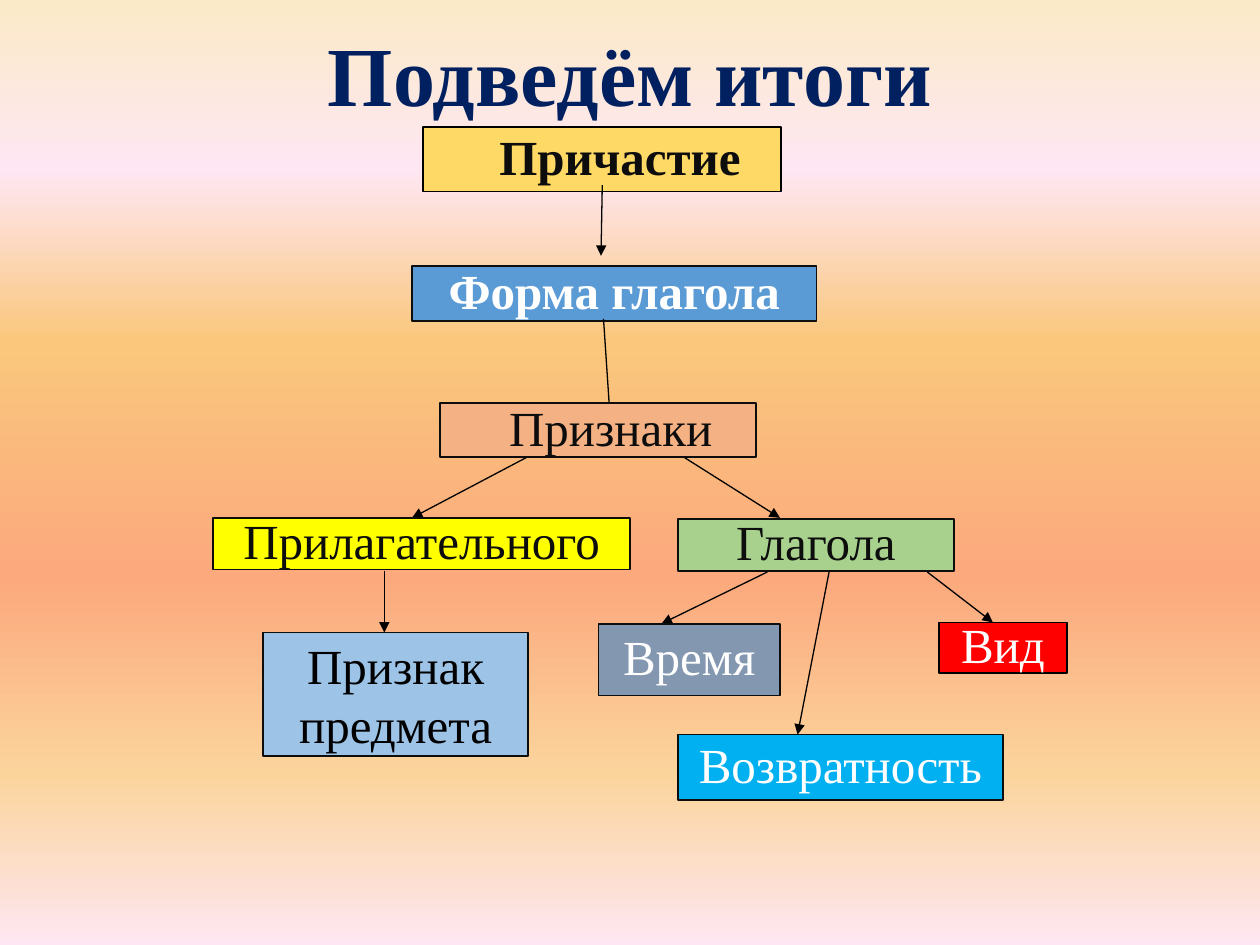
from lxml.etree import SubElement
from pptx import Presentation
from pptx.dml.color import RGBColor
from pptx.enum.shapes import MSO_CONNECTOR, MSO_SHAPE
from pptx.enum.text import MSO_ANCHOR, PP_ALIGN
from pptx.oxml.ns import qn
from pptx.util import Inches, Pt

COLORS = {
    "navy": "002060", "black": "000000", "ink": "0D0D0D", "white": "FFFFFF",
    "gold": "FFD966", "blue": "5B9BD5", "orange": "F4B183", "yellow": "FFFF00",
    "green": "A9D18E", "light blue": "9DC3E6", "slate": "8497B0",
    "red": "FF0000", "sky": "00B0F0",
}
BACKGROUND = [(0, "FBEAC7"), (18, "FEE7F2"), (36, "FAC77D"),
              (61, "FBA97D"), (82, "FBD49C"), (100, "FEE7F2")]

# text, (left, top, width, height), fill, line, text colour, format
BOXES = [
    ("Причастие", (3.36, 1.01, 2.84, 0.51), "gold", "black", "ink",
     {"bold": True, "left": 0.38}),
    ("Форма глагола", (3.27, 2.11, 3.21, 0.44), "blue", "ink", "white", {"bold": True}),
    ("Признаки", (3.49, 3.2, 2.51, 0.43), "orange", "ink", "ink", {"left": 0.3}),
    ("Прилагательного", (1.69, 4.11, 3.31, 0.41), "yellow", "ink", "ink", {}),
    ("Глагола", (5.38, 4.12, 2.19, 0.41), "green", "ink", "ink", {}),
    ("Признак\nпредмета", (2.09, 5.02, 2.1, 0.98), "light blue", "ink", "black",
     {"spacing": 1.0}),
    ("Время", (4.75, 4.95, 1.44, 0.57), "slate", "ink", "white", {}),
    ("Вид", (7.45, 4.94, 1.02, 0.4), "red", "black", "white", {}),
    ("Возвратность", (5.38, 5.83, 2.58, 0.52), "sky", "ink", "white", {}),
]
ARROWS = [
    (4.78, 1.47, 4.77, 2.03), (4.79, 2.53, 4.84, 3.28),
    (4.18, 3.63, 3.27, 4.11), (5.43, 3.63, 6.19, 4.11),
    (3.05, 4.53, 3.05, 5.02), (6.09, 4.54, 5.25, 4.95),
    (7.36, 4.54, 7.88, 4.94), (6.58, 4.54, 6.33, 5.83),
]


def set_font(paragraph, size, color, bold=False):
    for name, value in {"name": "Times New Roman", "size": Pt(size), "bold": bold}.items():
        for run in paragraph.runs:
            setattr(run.font, name, value)
            run.font.color.rgb = RGBColor.from_string(COLORS[color])


def add_boxes(boxes):
    """Add filled boxes; tight lines and no vertical insets keep letter tails inside."""
    for text, place, fill, line, color, style in boxes:
        shape = slide.shapes.add_shape(MSO_SHAPE.RECTANGLE, *map(Inches, place))
        shape.shadow.inherit = False
        shape.fill.solid()
        shape.fill.fore_color.rgb = RGBColor.from_string(COLORS[fill])
        shape.line.color.rgb = RGBColor.from_string(COLORS[line])
        shape.line.width = Pt(1)
        frame = shape.text_frame
        frame.word_wrap = True
        frame.vertical_anchor = MSO_ANCHOR.MIDDLE
        frame.margin_left = Inches(style.get("left", 0.1))
        frame.margin_top = frame.margin_bottom = 0
        frame.text = text
        for paragraph in frame.paragraphs:
            paragraph.alignment = PP_ALIGN.CENTER
            paragraph.line_spacing = style.get("spacing", 0.9)
            set_font(paragraph, 28, color, style.get("bold", False))


presentation = Presentation()
presentation.slide_width, presentation.slide_height = Inches(10), Inches(7.5)
slide = presentation.slides.add_slide(presentation.slide_layouts[6])

# Background gradient, top to bottom
background = slide.background.fill
background.gradient()
background.gradient_angle = 270
stops = next(slide.element.iter(qn("a:gsLst")))
for stop in list(stops):
    stops.remove(stop)
for position, color in BACKGROUND:
    stop = SubElement(stops, qn("a:gs"), pos=str(position * 1000))
    SubElement(stop, qn("a:srgbClr"), val=color)

# Title with outlined letters
title = slide.shapes.add_textbox(Inches(2.48), Inches(0.13), Inches(5.04), Inches(0.91))
title.text_frame.word_wrap = False
paragraph = title.text_frame.paragraphs[0]
paragraph.text = "Подведём итоги"
paragraph.alignment = PP_ALIGN.CENTER
set_font(paragraph, 48, "navy", True)
properties = paragraph.runs[0].font._element
outline = SubElement(properties, qn("a:ln"), w=str(Pt(0.83)))
outline_fill = SubElement(outline, qn("a:solidFill"))
SubElement(outline_fill, qn("a:srgbClr"), val=COLORS["navy"])
properties.insert(0, outline)

# Arrows lie over the two top boxes and under the others
add_boxes(BOXES[:2])
for ends in ARROWS:
    arrow = slide.shapes.add_connector(MSO_CONNECTOR.STRAIGHT, *map(Inches, ends))
    arrow.line.color.rgb = RGBColor.from_string(COLORS["black"])
    arrow.line.width = Pt(0.75)
    SubElement(arrow.line._get_or_add_ln(), qn("a:tailEnd"), type="triangle")
    SubElement(arrow._element.spPr, qn("a:effectLst"))
add_boxes(BOXES[2:])

presentation.save("out.pptx")
